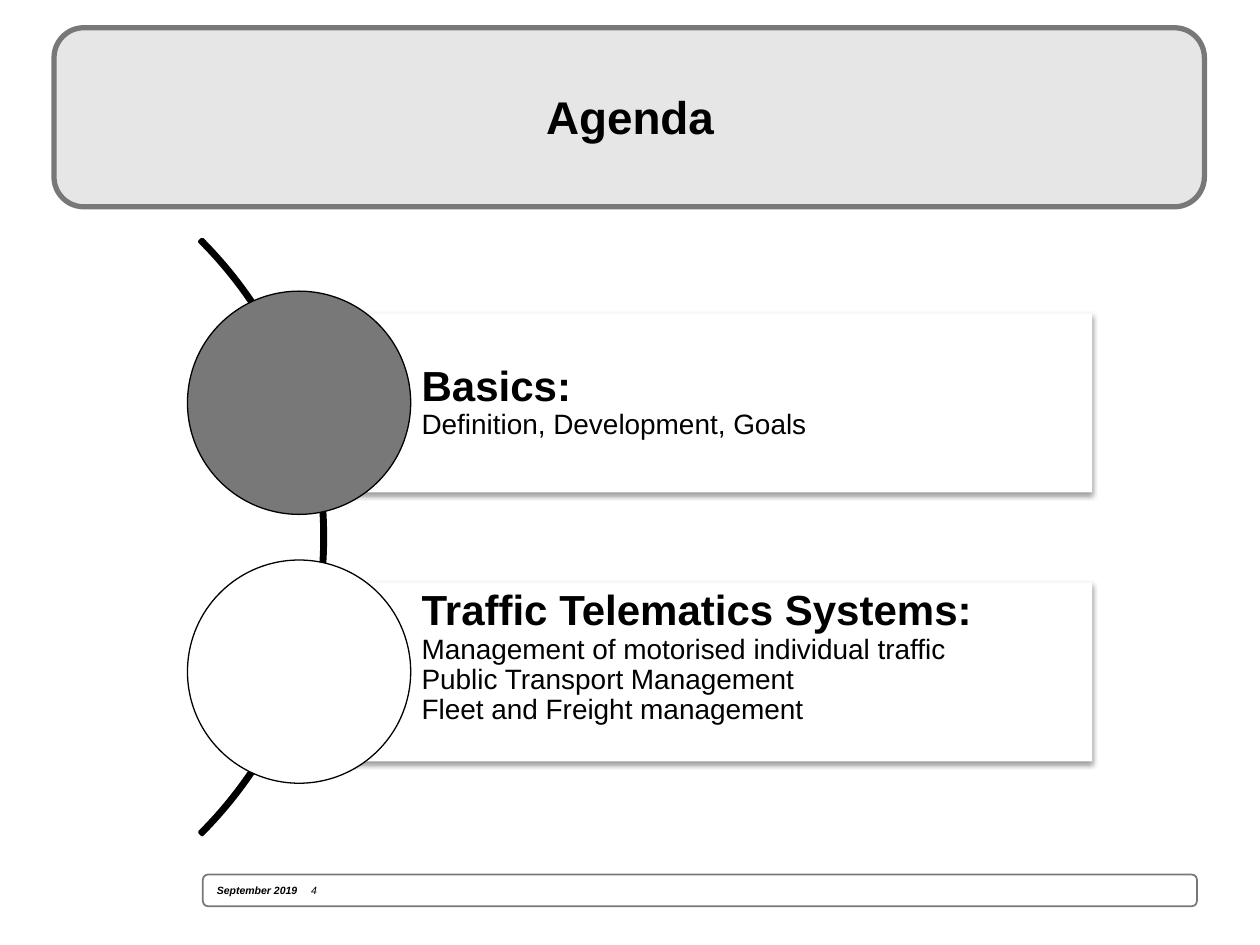
"""Build an agenda slide with two topic cards along an arc."""
import pptx
import pptx.dml.color
import pptx.enum.shapes
import pptx.enum.text
import pptx.oxml
import pptx.oxml.ns
import pptx.util

Cm, Pt = pptx.util.Cm, pptx.util.Pt
Kind = pptx.enum.shapes.MSO_SHAPE
Align = pptx.enum.text.PP_ALIGN
Mid = pptx.enum.text.MSO_ANCHOR.MIDDLE
hues = {"ink": "000000", "gray": "787878", "pale": "E7E6E6", "white": "FFFFFF"}
space = pptx.oxml.ns.nsdecls("a")


def draw(kind, left, top, width, height, fill, line=None, weight=1):
    shape = slide.shapes.add_shape(kind, Cm(left), Cm(top), Cm(width), Cm(height))
    shape.shadow.inherit = False
    shape.fill.solid()
    shape.fill.fore_color.rgb = pptx.dml.color.RGBColor.from_string(hues[fill])
    if line:
        shape.line.color.rgb = pptx.dml.color.RGBColor.from_string(hues[line])
        shape.line.width = Pt(weight)
    else:
        shape.line.fill.background()
    return shape


def write(para, text, size, bold=False, italic=False, align=Align.LEFT, spacing=None):
    run = para.add_run()
    run.text = text
    font = run.font
    font.name, font.size, font.bold, font.italic = "Arial", Pt(size), bold, italic
    font.color.rgb = pptx.dml.color.RGBColor.from_string(hues["ink"])
    para.alignment = align
    if spacing:
        para.line_spacing = spacing


deck = pptx.Presentation()
deck.slide_width, deck.slide_height = Cm(25.4), Cm(19.05)
slide = deck.slides.add_slide(deck.slide_layouts[5])

foot = draw(Kind.ROUNDED_RECTANGLE, 4.09, 17.63, 20.04, 0.64, "white", "gray")
foot.text_frame.vertical_anchor = Mid
para = foot.text_frame.paragraphs[0]
tabs = f'<a:tabLst {space}><a:tab pos="{Cm(1.9)}" algn="l"/></a:tabLst>'
para._p.get_or_add_pPr().append(pptx.oxml.parse_xml(tabs))
write(para, "September 2019\t", 6, bold=True, italic=True)
write(para, "4", 6, italic=True)

draw(Kind.ROUNDED_RECTANGLE, 1.09, 0.56, 23.19, 3.61, "pale", "gray", 3)
title = slide.shapes.title
title.left, title.top, title.width, title.height = Cm(1.5), Cm(0.76), Cm(22.4), Cm(3.18)
title.text_frame.vertical_anchor = Mid
title.text_frame.auto_size = pptx.enum.text.MSO_AUTO_SIZE.NONE
write(title.text_frame.paragraphs[0], "Agenda", 26.2, bold=True, align=Align.CENTER)
title.element.getparent().append(title.element)

arc = draw(Kind.BLOCK_ARC, -10.41, 2.34, 16.97, 16.97, "ink", "ink", 2)
for place, value in enumerate((189, 27, 0.004)):
    arc.adjustments[place] = value

shade = (
    f'<a:effectLst {space}><a:outerShdw blurRad="{Pt(3.1)}" dist="{Pt(1.6)}" '
    f'dir="5400000" rotWithShape="0"><a:srgbClr val="{hues["ink"]}">'
    '<a:alpha val="38000"/></a:srgbClr></a:outerShdw></a:effectLst>'
)
topics = [
    ("gray", 0.18, "Basics:", ["Definition, Development, Goals"]),
    ("white", 0.76, "Traffic Telematics Systems:", [
        "Management of motorised individual traffic",
        "Public Transport Management",
        "Fleet and Freight management",
    ]),
]
for index, (fill, base, head, lines) in enumerate(topics):
    top = 6.32 + index * 5.42
    card = draw(Kind.RECTANGLE, 5.66, top, 16.36, 3.61, "white")
    props = card.element.spPr
    props.remove(props.find(pptx.oxml.ns.qn("a:effectLst")))
    props.append(pptx.oxml.parse_xml(shade))
    frame = card.text_frame
    frame.word_wrap = True
    frame.vertical_anchor = Mid
    frame.margin_left, frame.margin_right = Cm(2.84), Cm(0.18)
    frame.margin_top, frame.margin_bottom = Cm(0.18), Cm(base)
    write(frame.paragraphs[0], head, 24, bold=True, spacing=0.9)
    for line in lines:
        write(frame.add_paragraph(), line, 16, spacing=0.9)
    draw(Kind.OVAL, 3.78, top - 0.45, 4.5, 4.5, fill, "ink", 0.75)

deck.save("out.pptx")
